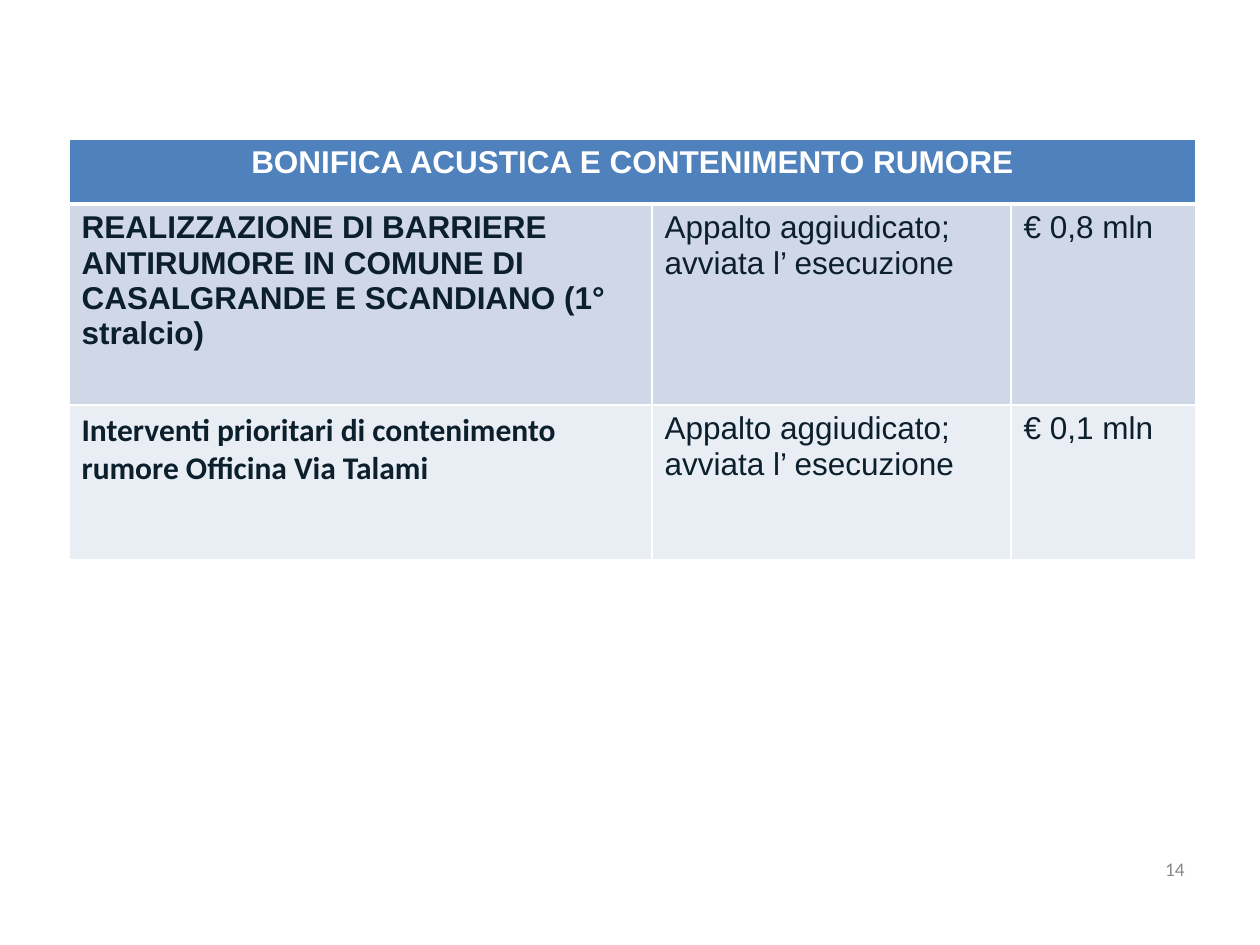
from lxml.etree import SubElement as Sub
from pptx import Presentation
from pptx.dml.color import RGBColor
from pptx.enum.text import MSO_ANCHOR as Anchor, PP_ALIGN as Align
from pptx.oxml.ns import qn
from pptx.util import Emu, Pt

SCALE = 914400 // 126  # EMU in one px
INK, WHITE = "0B1F2C", "FFFFFF"
COLS = [583, 359, 185]
ROWS = [65, 201, 155]
TITLE = "BONIFICA ACUSTICA E CONTENIMENTO RUMORE"
STATE = "Appalto aggiudicato; avviata l’ esecuzione"
# Work, its font, state, cost, row fill
WORKS = [
    ("REALIZZAZIONE DI BARRIERE ANTIRUMORE IN COMUNE DI CASALGRANDE E "
     "SCANDIANO (1° stralcio)", "Arial", STATE, "€ 0,8 mln", "D0D8E8"),
    ("Interventi prioritari di contenimento rumore Officina Via Talami",
     "Calibri", STATE, "€ 0,1 mln", "E9EDF4"),
]


def px(n):
    return Emu(n * SCALE)


def color(code):
    return RGBColor.from_string(code)


def write(frame, text, size, face, code, bold=False, align=Align.LEFT):
    para = frame.paragraphs[0]
    para.alignment = align
    run = para.add_run()
    run.text = text
    font = run.font
    font.size, font.name, font.bold = Pt(size), face, bold
    font.color.rgb = color(code)


def edge(cell, tag, width):
    line = Sub(cell._tc.get_or_add_tcPr(), qn(f"a:{tag}"), w=str(Pt(width)))
    Sub(Sub(line, qn("a:solidFill")), qn("a:srgbClr"), val=WHITE)


def paint(cell, code, top, bottom):
    # Borders come before the fill in the cell properties
    for tag, width in (("lnL", 1), ("lnR", 1), ("lnT", top), ("lnB", bottom)):
        edge(cell, tag, width)
    cell.fill.solid()
    cell.fill.fore_color.rgb = color(code)


def works_table(slide, x, y):
    table = slide.shapes.add_table(
        len(ROWS), len(COLS), px(x), px(y), px(sum(COLS)), px(sum(ROWS))).table
    table.first_row = table.horz_banding = False
    for col, width in zip(table.columns, COLS):
        col.width = px(width)
    for row, height in zip(table.rows, ROWS):
        row.height = px(height)

    # Header across all columns
    for cell in table.rows[0].cells:
        paint(cell, "4F81BD", 1, 3)
    head = table.cell(0, 0)
    head.merge(table.cell(0, len(COLS) - 1))
    write(head.text_frame, TITLE, 18, "Arial", WHITE, True, Align.CENTER)

    # One row for each work
    for r, (work, face, state, cost, fill) in enumerate(WORKS, 1):
        parts = [(work, face, True), (state, "Arial", False),
                 (cost, "Arial", False)]
        for c, (text, name, bold) in enumerate(parts):
            cell = table.cell(r, c)
            paint(cell, fill, 3 if r == 1 else 1, 1)
            write(cell.text_frame, text, 18, name, INK, bold)


def page_number(slide, x, y, w, h):
    frame = slide.shapes.add_textbox(px(x), px(y), px(w), px(h)).text_frame
    frame.word_wrap = True
    frame.vertical_anchor = Anchor.MIDDLE
    write(frame, "14", 11, "Calibri", "898989", align=Align.RIGHT)


def main():
    deck = Presentation()
    deck.slide_width, deck.slide_height = px(1260), px(945)
    slide = deck.slides.add_slide(deck.slide_layouts[6])
    works_table(slide, 69, 139)
    page_number(slide, 903, 838, 294, 62)
    deck.save("out.pptx")


if __name__ == "__main__":
    main()
